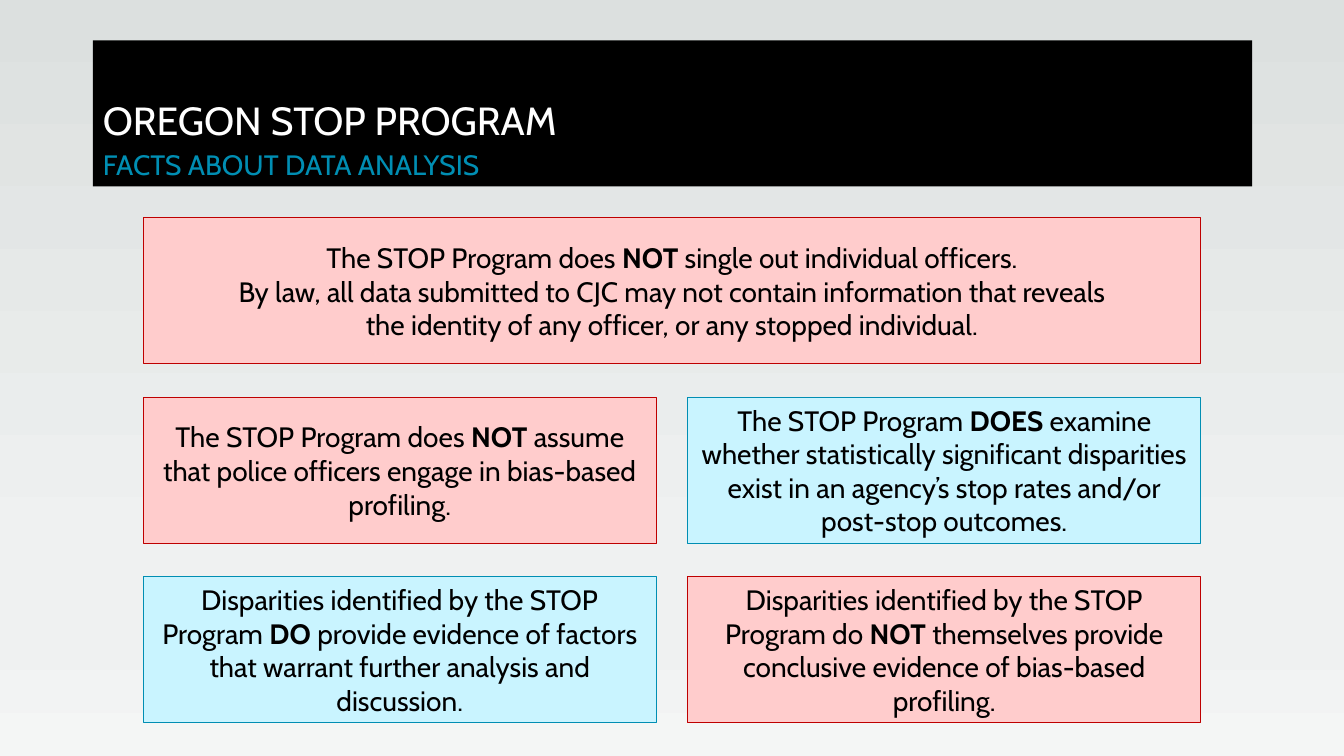
"""Build the Oregon STOP Program slide on facts about data analysis."""
from copy import deepcopy
from dataclasses import dataclass

from pptx import Presentation
from pptx.dml.color import RGBColor as RGB
from pptx.enum.shapes import MSO_SHAPE as SHAPE
from pptx.enum.text import MSO_ANCHOR as ANCHOR, MSO_AUTO_SIZE as FIT, PP_ALIGN as ALIGN
from pptx.slide import Slide
from pptx.text.text import Font
from pptx.util import Pt

PX = 9144
LEFT, TOP = 142, 216
CARD_W, CARD_H = 509, 145
STEP_X, STEP_Y = 540, 178


@dataclass(frozen=True)
class Tone:
    fill: str
    line: str


@dataclass(frozen=True)
class Theme:
    font: str = "Cabin"
    title_size: int = 28
    text_size: int = 20
    title_fill: str = "000000"
    title: str = "FFFFFF"
    subtitle: str = "008EB3"
    text: str = "000000"
    denied: Tone = Tone("FFCCCC", "BE0000")
    affirmed: Tone = Tone("C9F4FF", "008EB3")
    backdrop: tuple[tuple[float, str], ...] = (
        (0, "DCE0DF"), (0.74, "EFF1F1"), (0.83, "EFF1F1"), (1, "F4F6F5"))


@dataclass(frozen=True)
class Card:
    col: int
    row: int
    tone: Tone
    lines: tuple[str, ...]
    span: int = 1


THEME = Theme()
CARDS = (
    Card(0, 0, THEME.denied, (
        "The STOP Program does *NOT* single out individual officers.",
        "By law, all data submitted to CJC may not contain information that reveals",
        "the identity of any officer, or any stopped individual."), span=2),
    Card(0, 1, THEME.denied, (
        "The STOP Program does *NOT* assume that police officers engage in "
        "bias-based profiling.",)),
    Card(1, 1, THEME.affirmed, (
        "The STOP Program *DOES* examine whether statistically significant "
        "disparities exist in an agency’s stop rates and/or post-stop outcomes.",)),
    Card(0, 2, THEME.affirmed, (
        "Disparities identified by the STOP Program *DO* provide evidence of "
        "factors that warrant further analysis and discussion.",)),
    Card(1, 2, THEME.denied, (
        "Disparities identified by the STOP Program do *NOT* themselves provide "
        "conclusive evidence of bias-based profiling.",)),
)


def style(font: Font, size: int, color: str, bold: bool = False) -> None:
    font.name = THEME.font
    font.size = Pt(size)
    font.bold = bold
    font.color.rgb = RGB.from_string(color)


def paint_background(s: Slide) -> None:
    fill = s.background.fill
    fill.gradient()
    fill.gradient_angle = 270
    stops = fill._fill._gradFill.gsLst
    for _ in range(len(THEME.backdrop) - len(stops)):
        stops.append(deepcopy(stops[-1]))
    for stop, (position, color) in zip(fill.gradient_stops, THEME.backdrop):
        stop.position = position
        stop.color.rgb = RGB.from_string(color)


def add_title(s: Slide) -> None:
    sp = s.shapes.title
    sp.left, sp.top, sp.width, sp.height = (v * PX for v in (92, 40, 1150, CARD_H))
    sp.fill.solid()
    sp.fill.fore_color.rgb = RGB.from_string(THEME.title_fill)
    tf = sp.text_frame
    tf.vertical_anchor = ANCHOR.BOTTOM
    tf.auto_size = FIT.NONE
    p = tf.paragraphs[0]
    p.text = "OREGON STOP PROGRAM\vFACTS ABOUT DATA ANALYSIS"
    p.alignment = ALIGN.LEFT
    p.line_spacing = 1.14
    heading, subtitle = p.runs
    style(heading.font, THEME.title_size, THEME.title)
    style(subtitle.font, THEME.text_size, THEME.subtitle)


def add_card(s: Slide, card: Card) -> None:
    left, top = LEFT + card.col * STEP_X, TOP + card.row * STEP_Y
    width = CARD_W + (card.span - 1) * STEP_X
    sp = s.shapes.add_shape(SHAPE.RECTANGLE, left * PX, top * PX, width * PX, CARD_H * PX)
    sp.shadow.inherit = False
    sp.fill.solid()
    sp.fill.fore_color.rgb = RGB.from_string(card.tone.fill)
    sp.line.color.rgb = RGB.from_string(card.tone.line)
    sp.line.width = Pt(0.75)
    tf = sp.text_frame
    tf.word_wrap = True
    tf.auto_size = FIT.SHAPE_TO_FIT_TEXT
    tf.vertical_anchor = ANCHOR.MIDDLE
    tf.text = "\n".join(line.partition("*")[0] for line in card.lines)
    for p, line in zip(tf.paragraphs, card.lines):
        p.alignment = ALIGN.CENTER
        for part in line.split("*")[1:]:
            p.add_run().text = part
        for i, r in enumerate(p.runs):
            style(r.font, THEME.text_size, THEME.text, bold=i % 2 == 1)


def main() -> None:
    prs = Presentation()
    prs.slide_width, prs.slide_height = 1333 * PX, 750 * PX
    s = prs.slides.add_slide(prs.slide_layouts[5])
    paint_background(s)
    add_title(s)
    for card in CARDS:
        add_card(s, card)
    prs.save("out.pptx")


if __name__ == "__main__":
    main()
